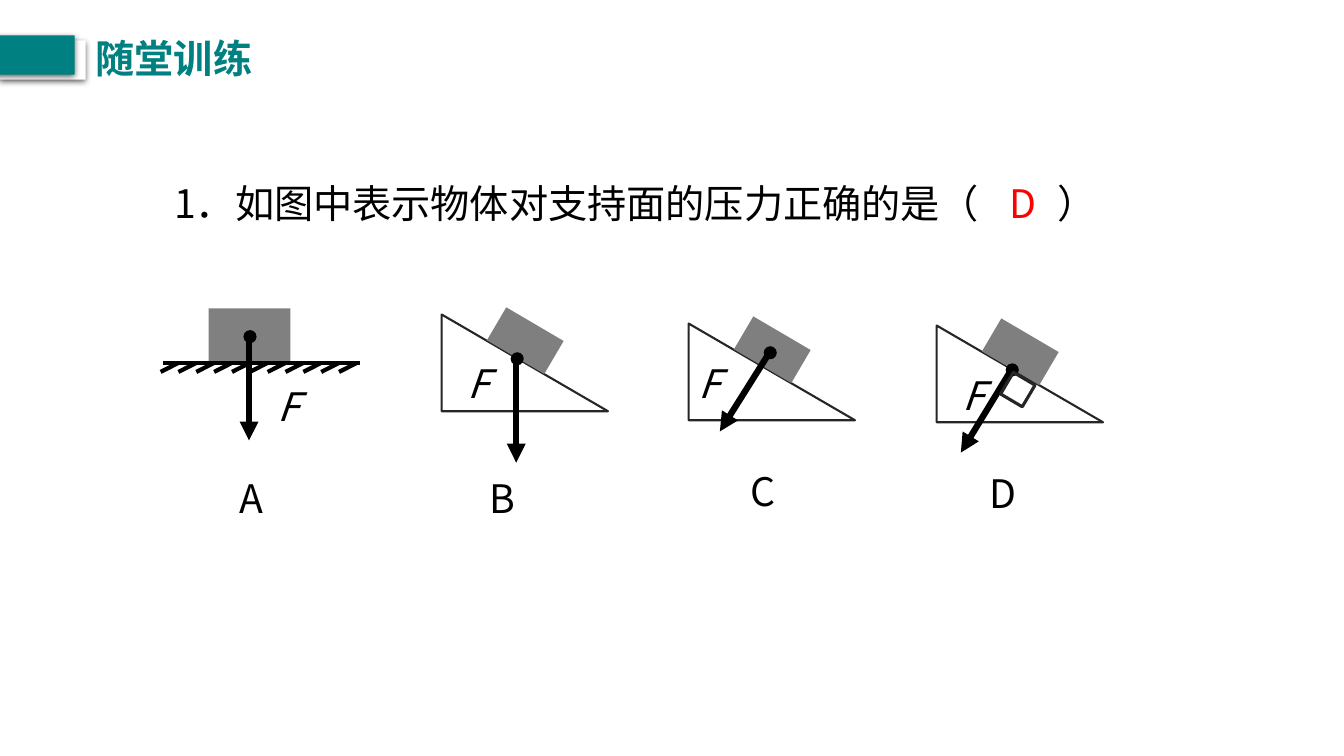
from dataclasses import dataclass

from lxml.etree import SubElement
from pptx import Presentation
from pptx.dml.color import RGBColor
from pptx.enum.shapes import MSO_CONNECTOR, MSO_SHAPE
from pptx.enum.text import MSO_AUTO_SIZE
from pptx.oxml import parse_xml
from pptx.oxml.ns import nsdecls, qn
from pptx.util import Inches, Pt


@dataclass(frozen=True)
class Theme:
    font: str = "Noto Sans CJK SC"
    text_size: int = 28
    teal: str = "008080"
    white: str = "FFFFFF"
    black: str = "000000"
    answer: str = "FF0000"
    block: str = "808080"
    sloped_block: str = "7F7F7F"
    outline: str = "262626"


THEME = Theme()
DOT = 0.13


def rgb(value):
    return RGBColor.from_string(value)


def add_text(slide, text, left, top, width, height, color=THEME.black,
             bold=False, italic=False, spacing=None, indent=0.1):
    box = slide.shapes.add_textbox(Inches(left), Inches(top), Inches(width), Inches(height))
    frame = box.text_frame
    frame.word_wrap = True
    frame.auto_size = MSO_AUTO_SIZE.SHAPE_TO_FIT_TEXT
    frame.margin_left = Inches(indent)
    paragraph = frame.paragraphs[0]
    paragraph.text = text
    if spacing:
        paragraph.line_spacing = spacing
    font = paragraph.font
    font.size = Pt(THEME.text_size)
    font.bold, font.italic = bold, italic
    font.color.rgb = rgb(color)
    font.name = THEME.font
    # East Asian glyphs take their own typeface entry
    SubElement(paragraph.font._element, qn("a:ea"), typeface=THEME.font)


def add_figure(slide, kind, left, top, width, height, fill=None, line_width=None, rotation=0):
    figure = slide.shapes.add_shape(kind, Inches(left), Inches(top), Inches(width), Inches(height))
    figure.shadow.inherit = False
    figure.rotation = rotation
    if fill:
        figure.fill.solid()
        figure.fill.fore_color.rgb = rgb(fill)
    else:
        figure.fill.background()
    if line_width:
        figure.line.color.rgb = rgb(THEME.outline)
        figure.line.width = Pt(line_width)
    else:
        figure.line.fill.background()
    return figure


def add_line(slide, start, end, width, arrow=False):
    line = slide.shapes.add_connector(MSO_CONNECTOR.STRAIGHT, *map(Inches, start + end))
    line.line.color.rgb = rgb(THEME.black)
    line.line.width = Pt(width)
    if arrow:
        SubElement(line.line._get_or_add_ln(), qn("a:tailEnd"), type="triangle")
    SubElement(line._element.spPr, qn("a:effectLst"))


def add_force(slide, start, end, label_at):
    """Force arrow with its point of action and the letter F."""
    add_line(slide, start, end, 4.5, arrow=True)
    add_figure(slide, MSO_SHAPE.OVAL, start[0] - DOT / 2 + 0.01, start[1] - DOT / 2,
               DOT, DOT, THEME.black)
    add_text(slide, "F", *label_at, 0.81, 0.57, italic=True)


def add_banner(slide):
    for left, top, color in ((0, 0.4, THEME.white), (-0.11, 0.35, THEME.teal)):
        bar = add_figure(slide, MSO_SHAPE.RECTANGLE, left, top, 0.85, 0.39, color)
        effects = bar._element.spPr.find(qn("a:effectLst"))
        effects.append(parse_xml(
            f'<a:outerShdw {nsdecls("a")} blurRad="{Pt(4.5)}" dist="{Pt(1.5)}" '
            f'dir="5400000" algn="t" rotWithShape="0"><a:srgbClr val="{THEME.black}">'
            '<a:alpha val="63000"/></a:srgbClr></a:outerShdw>'))
    add_text(slide, "随堂训练", 0.85, 0.29, 3.74, 0.57, THEME.teal, bold=True)


def add_level_ground(slide):
    add_figure(slide, MSO_SHAPE.RECTANGLE, 2.07, 3.06, 0.81, 0.55, THEME.block)
    hatch_count, hatch_step = 11, 0.177
    for index in range(hatch_count):
        right = 1.77 + index * hatch_step
        add_line(slide, (right, 3.6), (right - hatch_step, 3.69), 3)
    add_line(slide, (1.62, 3.6), (3.57, 3.6), 3)


def add_incline(slide, left, top):
    add_figure(slide, MSO_SHAPE.RIGHT_TRIANGLE, left, top, 1.65, 0.96, line_width=1.5)
    add_figure(slide, MSO_SHAPE.RECTANGLE, left + 0.5, top + 0.07, 0.66, 0.38,
               THEME.sloped_block, rotation=30.4)


def main():
    deck = Presentation()
    deck.slide_width, deck.slide_height = Inches(13.33), Inches(7.5)
    slide = deck.slides.add_slide(deck.slide_layouts[6])

    # Heading and question
    add_banner(slide)
    add_text(slide, "1．如图中表示物体对支持面的压力正确的是（　　）",
             1.63, 1.5, 9.46, 0.72, spacing=1.5)
    add_text(slide, "D", 8.91, 1.5, 1.9, 0.72, THEME.answer, spacing=1.5, indent=1.1)

    # Option letters
    for letter, left, top, width, indent in (
        ("A", 2.28, 4.42, 0.87, 0.1),
        ("B", 3.75, 4.42, 1.85, 1.1),
        ("C", 7.35, 4.35, 1.21, 0.1),
        ("D", 8.71, 4.37, 1.9, 1.1),
    ):
        add_text(slide, letter, left, top, width, 0.72, spacing=1.5, indent=indent)

    # Option A: block on level ground
    add_level_ground(slide)
    add_force(slide, (2.47, 3.34), (2.47, 4.37), (2.65, 3.74))

    # Options B to D: block on an incline
    for incline, start, end, label_at in (
        ((4.38, 3.12), (5.12, 3.56), (5.12, 4.59), (4.54, 3.52)),
        ((6.83, 3.21), (7.63, 3.5), (7.14, 4.28), (6.83, 3.52)),
        ((9.29, 3.23), (10.03, 3.67), (9.53, 4.49), (9.45, 3.63)),
    ):
        add_incline(slide, *incline)
        add_force(slide, start, end, label_at)

    # Right-angle mark of option D
    add_figure(slide, MSO_SHAPE.RECTANGLE, 9.97, 3.74, 0.25, 0.25, line_width=2.25, rotation=30.5)

    deck.save("out.pptx")


if __name__ == "__main__":
    main()
